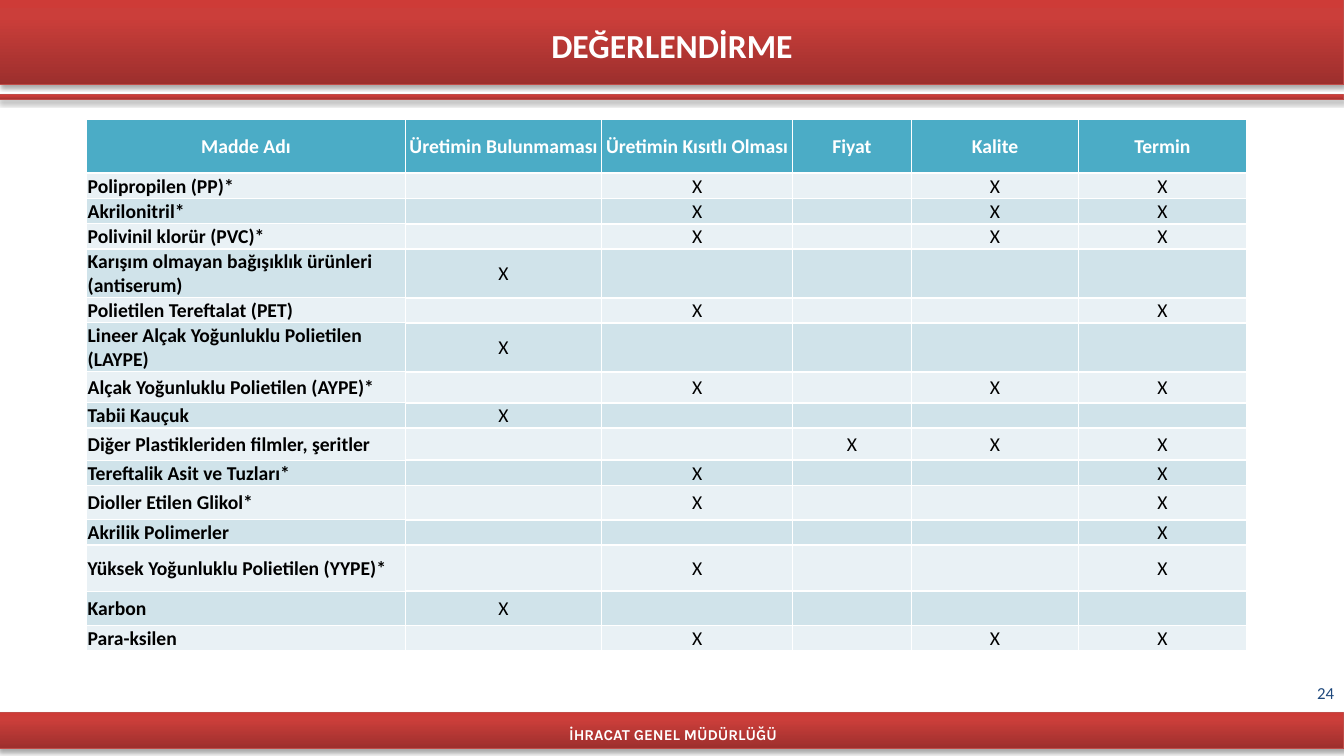
from lxml import etree
from pptx import Presentation
from pptx.dml.color import RGBColor
from pptx.enum.shapes import MSO_SHAPE
from pptx.enum.text import MSO_ANCHOR, MSO_AUTO_SIZE, PP_ALIGN
from pptx.oxml import parse_xml
from pptx.oxml.ns import nsdecls, qn
from pptx.util import Inches, Pt

LEFT, CENTER, RIGHT = PP_ALIGN.LEFT, PP_ALIGN.CENTER, PP_ALIGN.RIGHT
MIDDLE = MSO_ANCHOR.MIDDLE
NO_AUTOFIT = MSO_AUTO_SIZE.NONE
RECTANGLE = MSO_SHAPE.RECTANGLE
TITLE_ONLY = 5
WIDTH = 13.33

HEADINGS = ["Madde Adı", "Üretimin Bulunmaması", "Üretimin Kısıtlı Olması",
            "Fiyat", "Kalite", "Termin"]
COLUMN_WIDTHS = [3.16, 1.95, 1.89, 1.18, 1.66, 1.66]
HEADING_HEIGHT = 0.54
# Substance, row height, one mark per criterion
SUBSTANCES = [
    ("Polipropilen (PP)*", 0.25, "-X-XX"),
    ("Akrilonitril*", 0.25, "-X-XX"),
    ("Polivinil klorür (PVC)*", 0.25, "-X-XX"),
    ("Karışım olmayan bağışıklık ürünleri (antiserum)", 0.48, "X----"),
    ("Polietilen Tereftalat (PET)", 0.25, "-X--X"),
    ("Lineer Alçak Yoğunluklu Polietilen (LAYPE)", 0.48, "X----"),
    ("Alçak Yoğunluklu Polietilen (AYPE)*", 0.31, "-X-XX"),
    ("Tabii Kauçuk", 0.25, "X----"),
    ("Diğer Plastikleriden filmler, şeritler", 0.32, "--XXX"),
    ("Tereftalik Asit ve Tuzları*", 0.25, "-X--X"),
    ("Dioller Etilen Glikol*", 0.34, "-X--X"),
    ("Akrilik Polimerler", 0.25, "----X"),
    ("Yüksek Yoğunluklu Polietilen (YYPE)*", 0.46, "-X--X"),
    ("Karbon", 0.34, "X----"),
    ("Para-ksilen", 0.25, "-X-XX"),
]


def rgb(value):
    return RGBColor.from_string(value)


def write(frame, text, size=14, color="000000", bold=False, font="Calibri",
          align=CENTER):
    """Put one formatted paragraph into a text frame."""
    paragraph = frame.paragraphs[0]
    paragraph.alignment = align
    if not text:
        # Keeps an empty cell from growing to the default 18 pt
        etree.SubElement(paragraph._p, qn("a:endParaRPr"), sz=str(size * 100))
        return
    run = paragraph.add_run()
    run.text = text
    run.font.size = Pt(size)
    run.font.name = font
    run.font.bold = bold
    run.font.color.rgb = rgb(color)


class EvaluationSlide:
    WHITE = "FFFFFF"
    PAGE_NUMBER = "1F497D"
    BAND_STOPS = [(0, "9C2F2D"), (80, "CB3E3A"), (100, "CE3B37")]
    BAND_LINE = "BF4C48"
    HEADING_FILL = "4BACC6"
    ROW_FILLS = ["E9F1F5", "D0E3EA"]
    THIN, THICK = 1, 1.5

    def __init__(self, presentation):
        layout = presentation.slide_layouts[TITLE_ONLY]
        self.slide = presentation.slides.add_slide(layout)
        self.shapes = self.slide.shapes

    def band(self, top, height):
        """Full-width red gradient bar with a soft shadow below."""
        bar = self.shapes.add_shape(RECTANGLE, 0, Inches(top), Inches(WIDTH),
                                    Inches(height))
        bar.fill.gradient()
        bar.fill.gradient_angle = 90
        stops = bar._element.spPr.find(".//" + qn("a:gsLst"))
        for stop in list(stops):
            stops.remove(stop)
        for percent, color in self.BAND_STOPS:
            stop = etree.SubElement(stops, qn("a:gs"), pos=str(percent * 1000))
            etree.SubElement(stop, qn("a:srgbClr"), val=color)
        bar.line.color.rgb = rgb(self.BAND_LINE)
        bar.line.width = Pt(0.75)
        bar.shadow.inherit = False
        bar._element.spPr.find(qn("a:effectLst")).append(parse_xml(
            f'<a:outerShdw {nsdecls("a")} blurRad="{Pt(3.1)}" dist="{Pt(1.8)}" '
            'dir="5400000" rotWithShape="0"><a:srgbClr val="000000">'
            '<a:alpha val="35000"/></a:srgbClr></a:outerShdw>'))

    def title(self, text, left, top, width, height, **style):
        heading = self.shapes.title
        heading.left, heading.top = Inches(left), Inches(top)
        heading.width, heading.height = Inches(width), Inches(height)
        # The placeholder comes first, so lift it above the bands
        self.shapes._spTree.append(heading._element)
        self.fill_frame(heading.text_frame, text, **style)

    def label(self, text, left, top, width, height, **style):
        box = self.shapes.add_textbox(Inches(left), Inches(top), Inches(width),
                                      Inches(height))
        self.fill_frame(box.text_frame, text, **style)

    def fill_frame(self, frame, text, **style):
        frame.word_wrap = True
        frame.auto_size = NO_AUTOFIT
        frame.vertical_anchor = MIDDLE
        write(frame, text, **style)

    def cell(self, cell, text, fill, top_line, bottom_line, **style):
        cell.margin_left = cell.margin_right = cell.margin_top = Inches(0.01)
        cell.margin_bottom = 0
        cell.vertical_anchor = MIDDLE
        properties = cell._tc.get_or_add_tcPr()
        widths = {"lnL": self.THIN, "lnR": self.THIN,
                  "lnT": top_line, "lnB": bottom_line}
        for side, width in widths.items():
            line = etree.SubElement(properties, qn("a:" + side),
                                    w=str(Pt(width)))
            solid = etree.SubElement(line, qn("a:solidFill"))
            etree.SubElement(solid, qn("a:srgbClr"), val=self.WHITE)
        cell.fill.solid()
        cell.fill.fore_color.rgb = rgb(fill)
        write(cell.text_frame, text, **style)

    def matrix(self, left, top):
        """Table of substances against the criteria marked for each."""
        heights = [HEADING_HEIGHT] + [height for _, height, _ in SUBSTANCES]
        table = self.shapes.add_table(
            len(heights), len(HEADINGS), Inches(left), Inches(top),
            Inches(sum(COLUMN_WIDTHS)), Inches(sum(heights))).table
        for column, width in zip(table.columns, COLUMN_WIDTHS):
            column.width = Inches(width)
        for row, height in zip(table.rows, heights):
            row.height = Inches(height)

        for col, heading in enumerate(HEADINGS):
            self.cell(table.cell(0, col), heading, self.HEADING_FILL,
                      self.THIN, self.THICK, color=self.WHITE, bold=True)
        for row, (substance, _, marks) in enumerate(SUBSTANCES, 1):
            fill = self.ROW_FILLS[(row - 1) % 2]
            name_top = self.THICK if row == 1 else self.THIN
            self.cell(table.cell(row, 0), substance, fill, name_top, self.THIN,
                      bold=True, align=LEFT)
            mark_bottom = self.THIN if row == len(SUBSTANCES) else self.THICK
            for col, mark in enumerate(marks, 1):
                self.cell(table.cell(row, col), mark.strip("-"), fill,
                          self.THICK, mark_bottom)


def main():
    presentation = Presentation()
    presentation.slide_width = Inches(WIDTH)
    presentation.slide_height = Inches(7.5)
    page = EvaluationSlide(presentation)
    for top, height in [(0, 0.84), (0.94, 0.05), (7.07, 0.36)]:
        page.band(top, height)
    page.label("İHRACAT GENEL MÜDÜRLÜĞÜ", 5.25, 7.15, 2.85, 0.28, size=10.8,
               color=page.WHITE, bold=True, font="Karla")
    page.label("24", 10.22, 6.67, 3.11, 0.4, size=12, color=page.PAGE_NUMBER,
               align=RIGHT)
    page.title("DEĞERLENDİRME", 0, 0.2, WIDTH, 0.49, size=24,
               color=page.WHITE, bold=True)
    page.matrix(0.86, 1.18)
    presentation.save("out.pptx")


if __name__ == "__main__":
    main()
